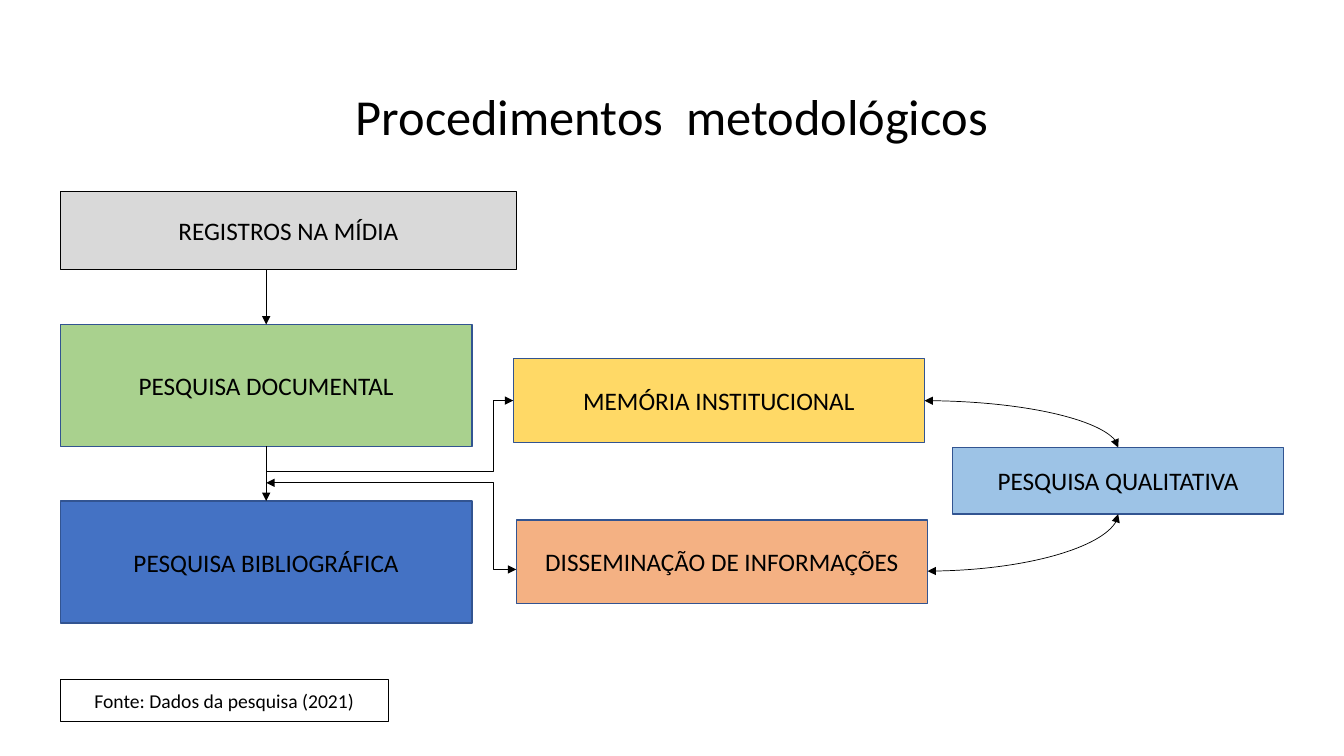
import pptx
import pptx.util
import pptx.dml.color
import pptx.enum.shapes
import pptx.enum.text
import pptx.oxml.ns
from lxml import etree

Inches, Pt = pptx.util.Inches, pptx.util.Pt
CONNECTOR = pptx.enum.shapes.MSO_CONNECTOR

HEADING = "Procedimentos  metodológicos"
HEADING_AREA = (2.64, 0.69, 8.05, 0.98)
BLUE, BLACK = "325491", "000000"

# Columns are (left, width) and rows are (top, height), in inches
COLUMNS = {
    "media": (0.6, 4.52), "research": (0.6, 4.08), "memory": (5.09, 4.08),
    "spread": (5.12, 4.08), "quality": (9.45, 3.28), "source": (0.6, 3.25),
}
ROWS = {
    "media": (1.9, 0.77), "documents": (3.22, 1.21), "memory": (3.56, 0.83),
    "quality": (4.44, 0.66), "books": (4.97, 1.21), "spread": (5.16, 0.83),
    "source": (6.74, 0.42),
}
# name: text, column, fill, line colour, line width, text size
BOXES = {
    "media": ("REGISTROS NA MÍDIA", "media", "D9D9D9", BLACK, 0.75, 18),
    "documents": ("PESQUISA DOCUMENTAL", "research", "A9D18E", BLUE, 1, 18),
    "books": ("PESQUISA BIBLIOGRÁFICA", "research", "4472C4", BLUE, 1, 18),
    "memory": ("MEMÓRIA INSTITUCIONAL", "memory", "FFD966", BLUE, 1, 18),
    "spread": ("DISSEMINAÇÃO DE INFORMAÇÕES", "spread", "F4B183", BLUE, 1, 18),
    "quality": ("PESQUISA QUALITATIVA", "quality", "9DC3E6", BLUE, 1, 18),
    "source": ("Fonte: Dados da pesquisa (2021)", "source", None, BLACK, 0.75, 14),
}


def rgb(value):
    return pptx.dml.color.RGBColor.from_string(value)


def area(name):
    (left, width), (top, height) = COLUMNS[BOXES[name][1]], ROWS[name]
    return left, top, width, height


def side(name, across, down):
    """Point of a box at the given shares of its width and height."""
    left, top, width, height = area(name)
    return left + across * width, top + down * height


def write(shape, text, size):
    frame = shape.text_frame
    frame.text = text
    frame.word_wrap = True
    frame.vertical_anchor = pptx.enum.text.MSO_ANCHOR.MIDDLE
    para = frame.paragraphs[0]
    para.alignment = pptx.enum.text.PP_ALIGN.CENTER
    para.font.color.rgb = rgb(BLACK)
    for key, value in {"name": "Calibri", "size": Pt(size), "bold": False}.items():
        setattr(para.font, key, value)
    return para


def add_box(page, name):
    text, _, fill, line, width, size = BOXES[name]
    box = page.shapes.add_shape(pptx.enum.shapes.MSO_SHAPE.RECTANGLE,
                                *map(Inches, area(name)))
    box.shadow.inherit = False
    if fill:
        box.fill.solid()
        box.fill.fore_color.rgb = rgb(fill)
    else:
        box.fill.background()
    box.line.color.rgb = rgb(line)
    box.line.width = Pt(width)
    write(box, text, size)
    return box


def add_arrow(page, kind, start, end, both=False):
    arrow = page.shapes.add_connector(kind, *map(Inches, (*start, *end)))
    arrow.line.color.rgb = rgb(BLACK)
    arrow.line.width = Pt(0.5)
    line = arrow.line._get_or_add_ln()
    for tag in ("a:headEnd", "a:tailEnd") if both else ("a:tailEnd",):
        etree.SubElement(line, pptx.oxml.ns.qn(tag), type="triangle")
    etree.SubElement(arrow._element.spPr, pptx.oxml.ns.qn("a:effectLst"))
    return arrow


def add_route(page, preset, start, end, turn=0, flips=(), bends=(), both=True):
    """Bent or curved arrow, turned by the given degrees about its centre."""
    (x1, y1), (x2, y2) = start, end
    wide, high = abs(x2 - x1), abs(y2 - y1)
    if turn % 180:
        wide, high = high, wide
    left, top = (x1 + x2 - wide) / 2, (y1 + y2 - high) / 2
    kind = CONNECTOR.CURVE if preset.startswith("curved") else CONNECTOR.ELBOW
    arrow = add_arrow(page, kind, (left, top), (left + wide, top + high), both)
    properties = arrow._element.spPr
    frame = properties.find(pptx.oxml.ns.qn("a:xfrm"))
    frame.set("rot", str(turn * 60000))
    for flip in flips:
        frame.set(flip, "1")
    shape = properties.find(pptx.oxml.ns.qn("a:prstGeom"))
    shape.set("prst", preset)
    guides = shape.find(pptx.oxml.ns.qn("a:avLst"))
    if guides is None:
        guides = etree.SubElement(shape, pptx.oxml.ns.qn("a:avLst"))
    for number, share in enumerate(bends, 1):
        etree.SubElement(guides, pptx.oxml.ns.qn("a:gd"), name=f"adj{number}",
                         fmla=f"val {round(share * 100000)}")


def main():
    deck = pptx.Presentation()
    deck.slide_width, deck.slide_height = Inches(13.33), Inches(7.5)
    page = deck.slides.add_slide(deck.slide_layouts[5])

    title = page.shapes.title
    title.left, title.top, title.width, title.height = map(Inches, HEADING_AREA)
    write(title, HEADING, 36).line_spacing = 0.9

    boxes = {name: add_box(page, name) for name in BOXES}

    below_documents = side("documents", 0.5, 1)
    axis = below_documents[0]
    down = add_arrow(page, CONNECTOR.STRAIGHT, below_documents, side("books", 0.5, 0))
    down.begin_connect(boxes["documents"], 2)
    down.end_connect(boxes["books"], 0)
    entry = add_arrow(page, CONNECTOR.STRAIGHT, (axis, sum(ROWS["media"])),
                      side("documents", 0.5, 0))
    entry.end_connect(boxes["documents"], 0)

    add_route(page, "bentConnector4", below_documents, side("memory", 0, 0.5),
              90, ("flipH", "flipV"), (-0.54, 0.92), both=False)
    add_route(page, "bentConnector3", (axis, 4.79), side("spread", 0, 0.59),
              bends=(0.91,))
    add_route(page, "curvedConnector2", side("quality", 0.5, 0),
              side("memory", 1, 0.5), 270, ("flipV",))
    add_route(page, "curvedConnector2", side("quality", 0.5, 1),
              side("spread", 1, 0.61), 90)

    deck.save("out.pptx")


if __name__ == "__main__":
    main()
